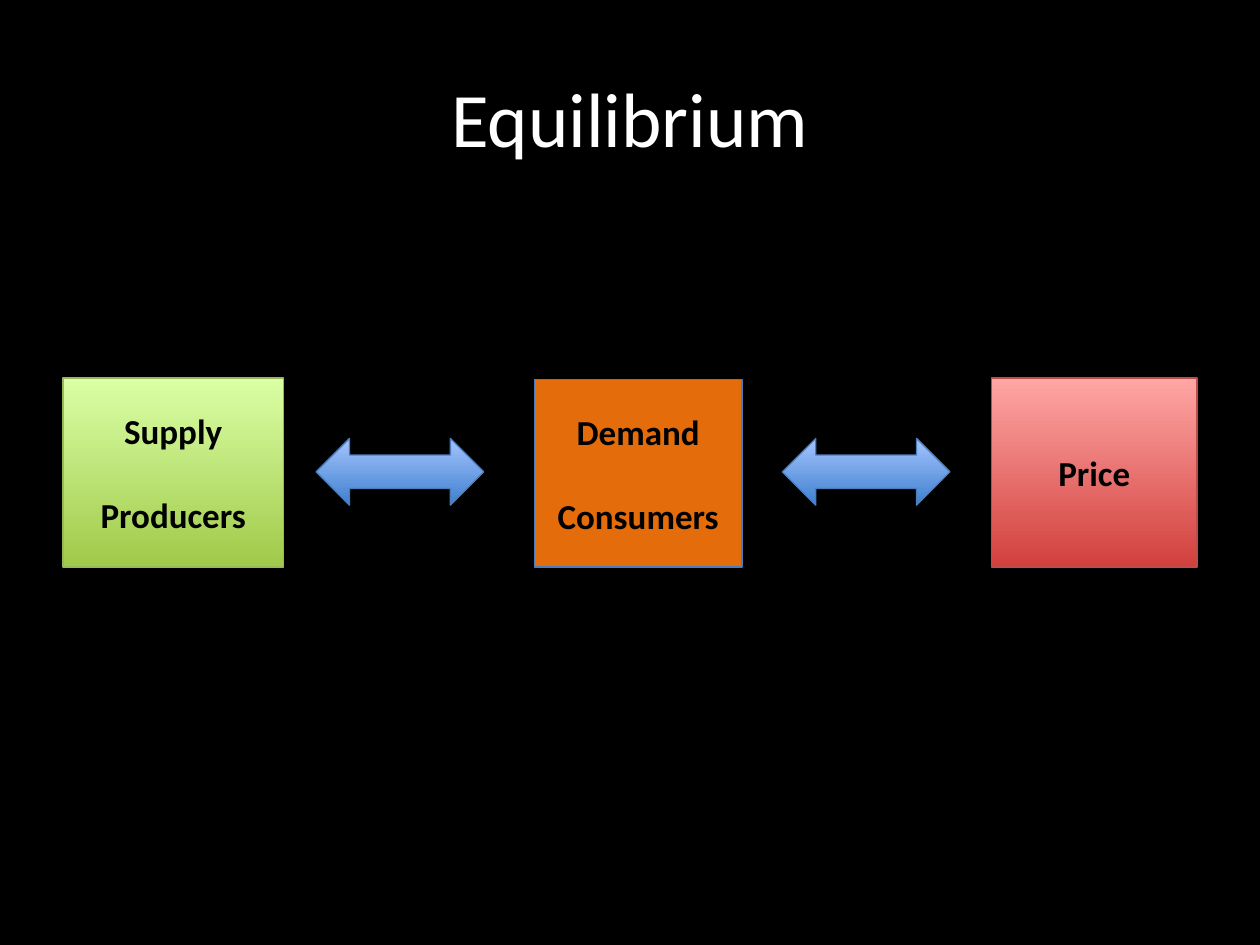
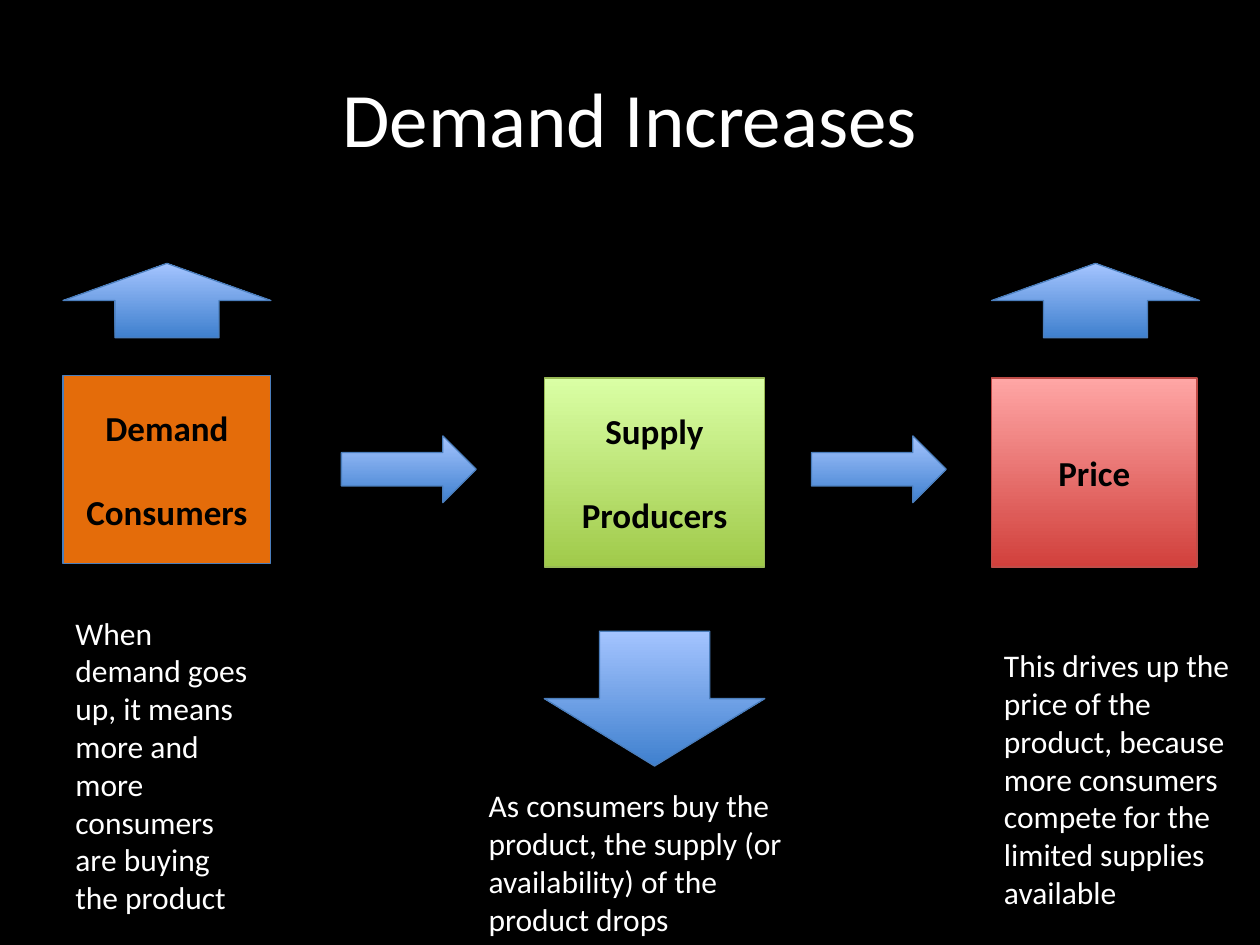
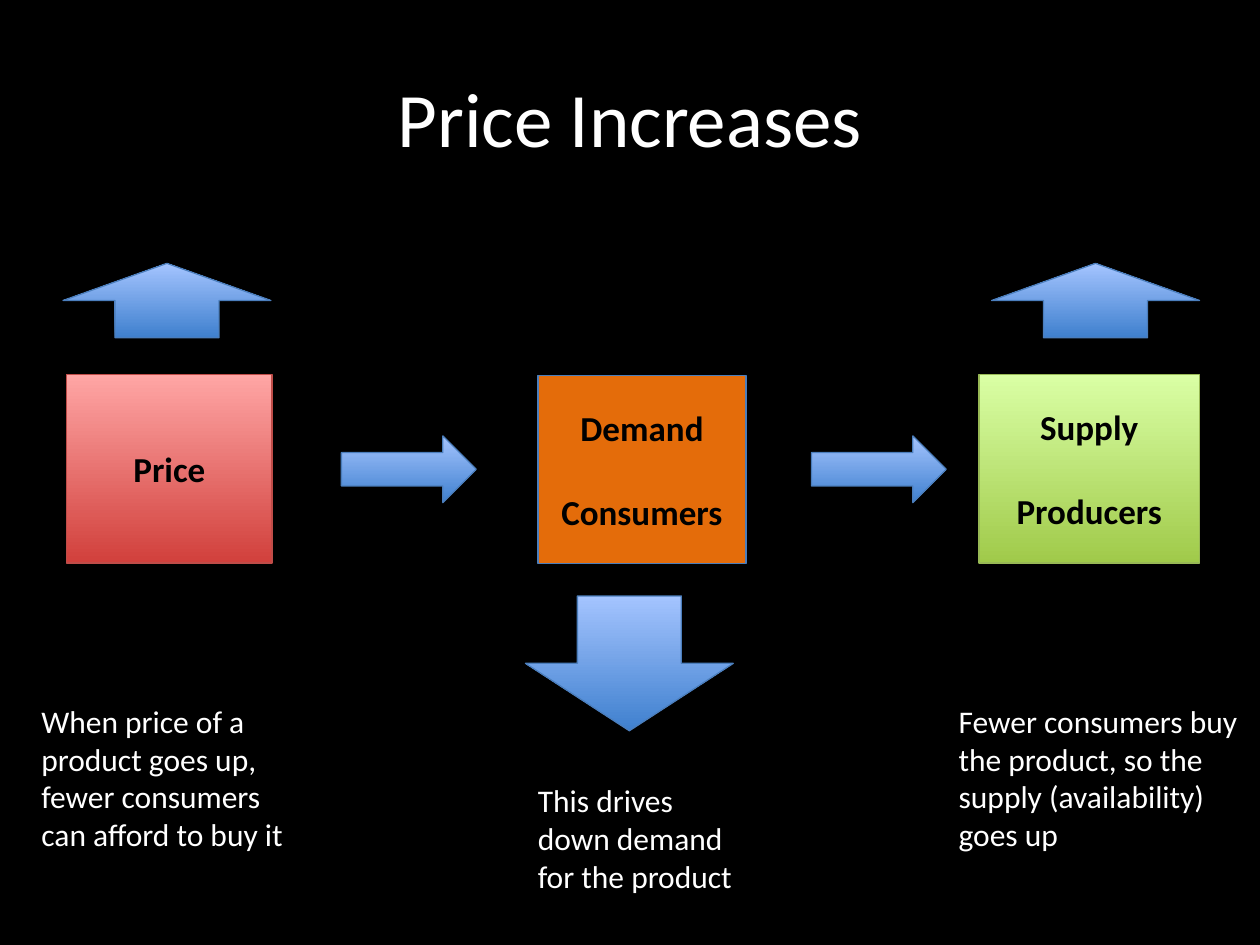
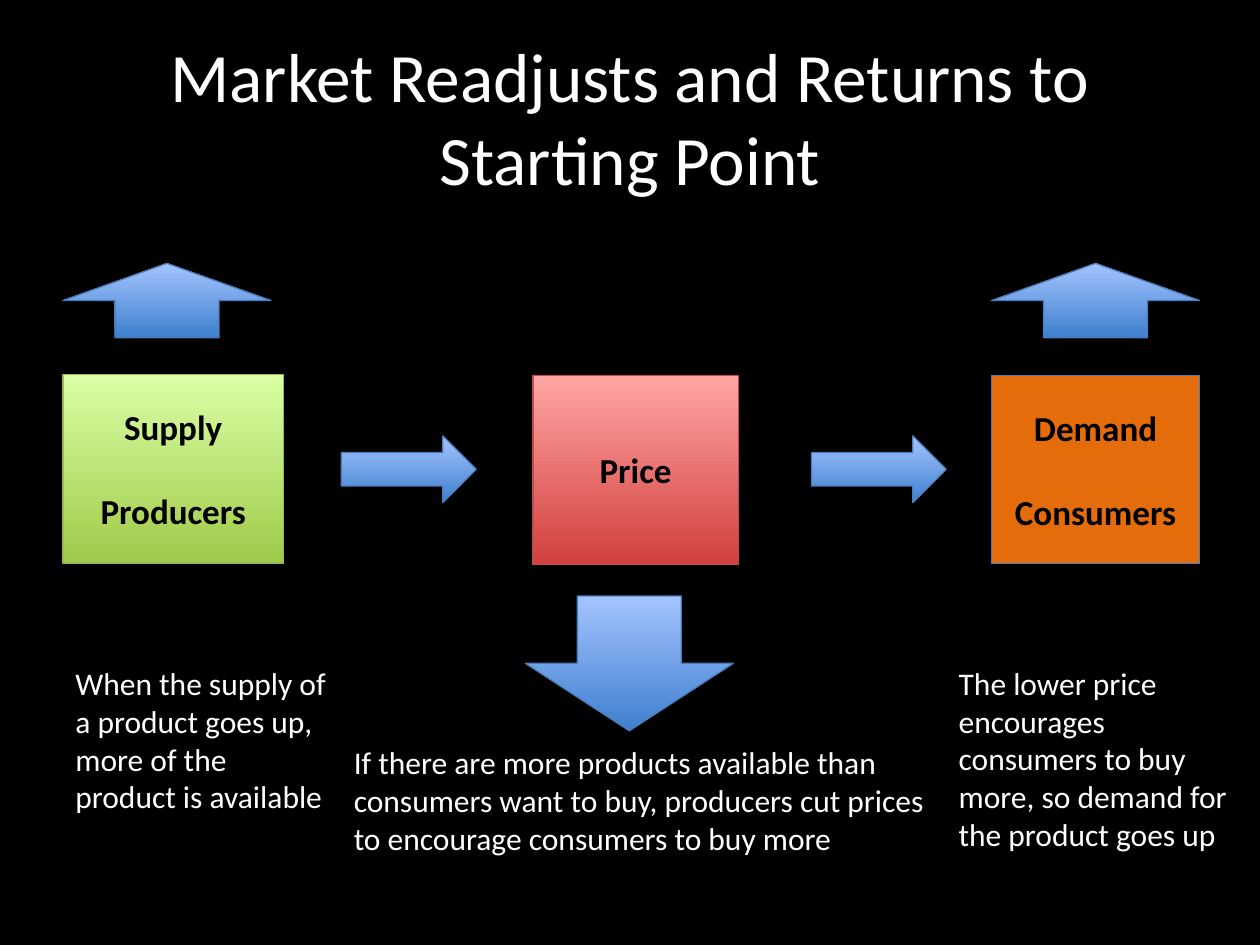
"""Builds four slides on how supply, demand and price return to balance."""
from dataclasses import dataclass

from pptx import Presentation
from pptx.dml.color import RGBColor
from pptx.enum.shapes import MSO_SHAPE
from pptx.enum.text import MSO_ANCHOR, MSO_AUTO_SIZE, PP_ALIGN
from pptx.util import Inches, Pt


@dataclass(frozen=True)
class Theme:
    font: str = "Calibri"
    back: str = "000000"
    ink: str = "FFFFFF"
    dark: str = "000000"
    green: tuple = ("A0CA4A", "DAFFA5")
    red: tuple = ("D1403C", "FFA6A5")
    blue: tuple = ("3F80CE", "A4C4FF")
    orange: tuple = ("E46C0A",)
    leaf: str = "98B955"
    rose: str = "BF4C48"
    navy: str = "4B7EBC"
    head: float = 44
    long: float = 39.6
    label: float = 20
    note: float = 18
    gap: float = 24
    edge: float = 0.75


LOOK = Theme()
COLS, ROWS = 100, 75
WIDE, HIGH = Inches(10), Inches(7.5)
KINDS = {
    "supply": (("Supply", "Producers"), LOOK.green, LOOK.leaf, 17.5, 15),
    "price": (("Price",), LOOK.red, LOOK.rose, 16.3, 15),
    "demand": (("Demand", "Consumers"), LOOK.orange, LOOK.navy, 16.5, 14.9),
}


def write(frame, *lines, size, color, bold=False, align=PP_ALIGN.LEFT,
          anchor=MSO_ANCHOR.TOP, gap=0, fit=MSO_AUTO_SIZE.NONE):
    frame.word_wrap = True
    frame.auto_size = fit
    frame.vertical_anchor = anchor
    for at, line in enumerate(lines):
        para = frame.add_paragraph() if at else frame.paragraphs[0]
        para.alignment = align
        if at:
            para.space_before = Pt(gap)
        run = para.add_run()
        run.text = line
        run.font.name = LOOK.font
        run.font.size = Pt(size)
        run.font.bold = bold
        run.font.color.rgb = RGBColor.from_string(color)


class Deck:
    def __init__(self, look):
        self.look = look
        self.file = Presentation()
        self.file.slide_width, self.file.slide_height = WIDE, HIGH
        fill = self.file.slide_master.background.fill
        fill.solid()
        fill.fore_color.rgb = RGBColor.from_string(look.back)

    def place(self, x, y, w, h):
        return [round(part * unit) for part, unit in
                zip((x, y, w, h), (WIDE / COLS, HIGH / ROWS) * 2)]

    def start(self, title, size):
        self.slide = self.file.slides.add_slide(self.file.slide_layouts[5])
        head = self.slide.shapes.title
        head.left, head.top, head.width, head.height = self.place(5, 3, 90, 12.5)
        write(head.text_frame, title, size=size, color=self.look.ink,
              align=PP_ALIGN.CENTER, anchor=MSO_ANCHOR.MIDDLE)

    def shape(self, form, spot, tints, edge):
        item = self.slide.shapes.add_shape(form, *self.place(*spot))
        item.shadow.inherit = False
        if len(tints) > 1:
            item.fill.gradient()
            item.fill.gradient_angle = 90
            for stop, tint in zip(item.fill.gradient_stops, tints):
                stop.color.rgb = RGBColor.from_string(tint)
        else:
            item.fill.solid()
            item.fill.fore_color.rgb = RGBColor.from_string(tints[0])
        item.line.color.rgb = RGBColor.from_string(edge)
        item.line.width = Pt(self.look.edge)
        return item

    def box(self, kind, x, y):
        words, tints, edge, w, h = KINDS[kind]
        item = self.shape(MSO_SHAPE.RECTANGLE, (x, y, w, h), tints, edge)
        write(item.text_frame, *words, size=self.look.label, color=self.look.dark,
              bold=True, align=PP_ALIGN.CENTER, anchor=MSO_ANCHOR.MIDDLE,
              gap=self.look.gap)

    def arrow(self, form, *spot):
        self.shape(form, spot, self.look.blue, self.look.navy)

    def note(self, text, *spot):
        item = self.slide.shapes.add_textbox(*self.place(*spot))
        write(item.text_frame, text, size=self.look.note, color=self.look.ink,
              fit=MSO_AUTO_SIZE.SHAPE_TO_FIT_TEXT)

    def cycle(self, title, boxes, drop, notes, size=LOOK.head):
        self.start(title, size)
        for spot in boxes:
            self.box(*spot)
        for x in (27.1, 64.4):
            self.arrow(MSO_SHAPE.RIGHT_ARROW, x, 34.6, 10.7, 5.3)
        for x in (5, 78.7):
            self.arrow(MSO_SHAPE.UP_ARROW, x, 20.9, 16.5, 5.9)
        self.arrow(MSO_SHAPE.DOWN_ARROW, *drop, 10.7)
        for spot in notes:
            self.note(*spot)


def main():
    deck = Deck(LOOK)
    deck.start("Equilibrium", LOOK.head)
    for spot in (("supply", 5, 30), ("price", 78.7, 30), ("demand", 42.4, 30.1)):
        deck.box(*spot)
    for x in (25.1, 62.1):
        deck.arrow(MSO_SHAPE.LEFT_RIGHT_ARROW, x, 34.8, 13.3, 5.3)

    deck.cycle(
        "Demand Increases",
        (("supply", 43.2, 30), ("price", 78.7, 30), ("demand", 5, 29.8)),
        (43.2, 50.1, 17.5),
        (("When demand goes up, it means more and more consumers are buying "
          "the product", 5, 48.2, 16.5, 25.2),
         ("As consumers buy the product, the supply (or availability) of the "
          "product drops", 37.8, 61.9, 26.6, 13.1),
         ("This drives up the price of the product, because more consumers "
          "compete for the limited supplies available", 78.7, 50.8, 21.3, 22.2)))
    deck.cycle(
        "Price Increases",
        (("supply", 77.7, 29.7), ("price", 5.3, 29.7), ("demand", 42.7, 29.8)),
        (41.7, 47.3, 16.5),
        (("When price of a product goes up, fewer consumers can afford to buy it",
          2.3, 55.2, 22.1, 16.1),
         ("This drives down demand for the product", 41.7, 61.5, 17.5, 13.5),
         ("Fewer consumers buy the product, so the supply (availability) goes up",
          75.1, 55.2, 24.9, 13.1)))
    deck.cycle(
        "Market Readjusts and Returns to Starting Point",
        (("supply", 5, 29.7), ("price", 42.3, 29.8), ("demand", 78.7, 29.8)),
        (41.7, 47.3, 16.5),
        (("When the supply of a product goes up, more of the product is available",
          5, 52.2, 22.1, 16.2),
         ("If there are more products available than consumers want to buy, "
          "producers cut prices to encourage consumers to buy more",
          27.1, 58.5, 48, 13.1),
         ("The lower price encourages consumers to buy more, so demand for the "
          "product goes up", 75.1, 52.2, 24.9, 19.4)),
        size=LOOK.long)
    deck.file.save("out.pptx")


if __name__ == "__main__":
    main()
